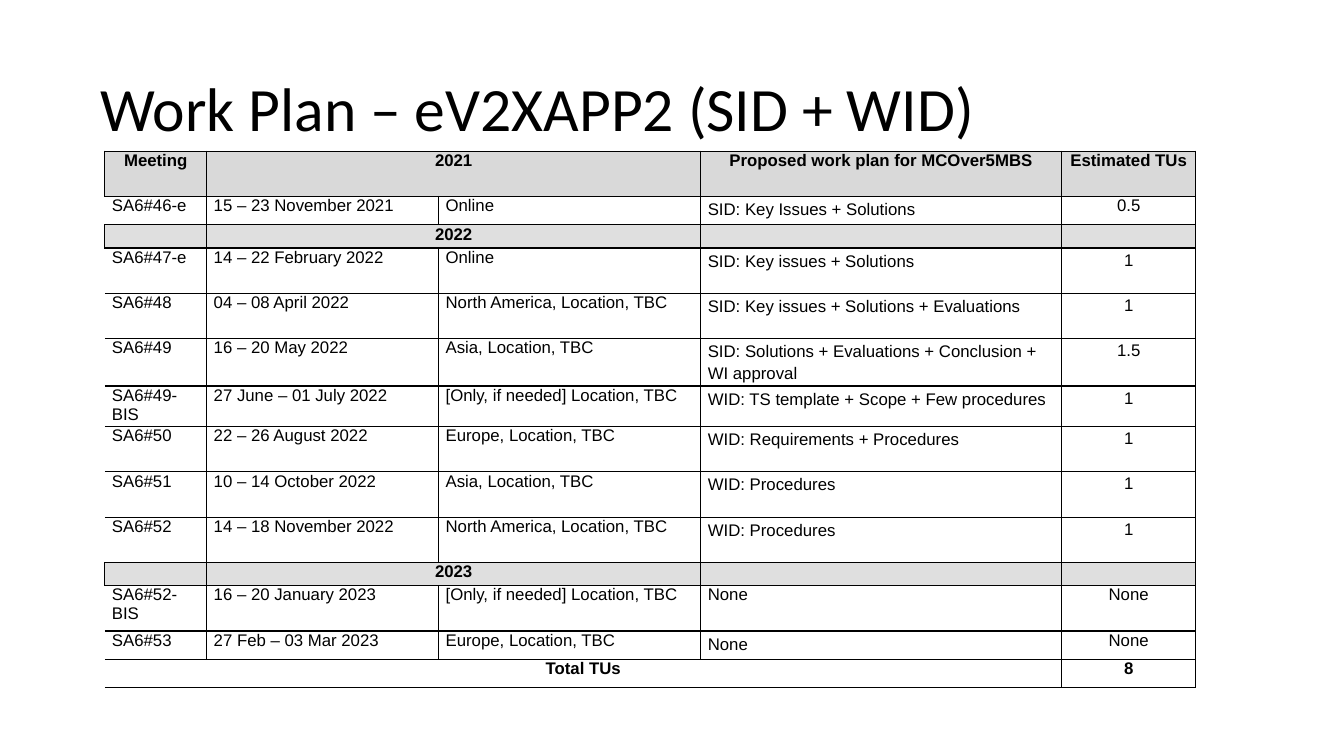
from lxml import etree
from pptx import Presentation
from pptx.dml.color import RGBColor
from pptx.enum.text import MSO_ANCHOR, PP_ALIGN
from pptx.oxml.ns import qn
from pptx.util import Inches, Pt

BLACK, WHITE, HEADER_GREY, YEAR_GREY = "000000", "FFFFFF", "D9D9D9", "DFDFDF"

COL_WIDTHS = [1.01, 2.3, 2.6, 3.58, 1.33]
TALL, SHORT, YEAR = 0.45, 0.28, 0.23
ROWS = [
    (TALL, ["Meeting", "2021", "", "Proposed work plan for MCOver5MBS", "Estimated TUs"]),
    (SHORT, ["SA6#46-e", "15 – 23 November 2021", "Online", "SID: Key Issues + Solutions", "0.5"]),
    (YEAR, ["", "2022", "", "", ""]),
    (TALL, ["SA6#47-e", "14 – 22 February 2022", "Online", "SID: Key issues + Solutions", "1"]),
    (TALL, ["SA6#48", "04 – 08 April 2022", "North America, Location, TBC",
            "SID: Key issues + Solutions + Evaluations", "1"]),
    (0.44, ["SA6#49", "16 – 20 May 2022", "Asia, Location, TBC",
            "SID: Solutions + Evaluations + Conclusion + WI approval", "1.5"]),
    (0.38, ["SA6#49-BIS", "27 June – 01 July 2022", "[Only, if needed] Location, TBC",
            "WID: TS template + Scope + Few procedures", "1"]),
    (TALL, ["SA6#50", "22 – 26 August 2022", "Europe, Location, TBC",
            "WID: Requirements + Procedures", "1"]),
    (TALL, ["SA6#51", "10 – 14 October 2022", "Asia, Location, TBC", "WID: Procedures", "1"]),
    (TALL, ["SA6#52", "14 – 18 November 2022", "North America, Location, TBC", "WID: Procedures", "1"]),
    (YEAR, ["", "2023", "", "", ""]),
    (TALL, ["SA6#52-BIS", "16 – 20 January 2023", "[Only, if needed] Location, TBC", "None", "None"]),
    (SHORT, ["SA6#53", "27 Feb – 03 Mar 2023", "Europe, Location, TBC", "None", "None"]),
    (SHORT, ["Total TUs", "", "", "", "8"]),
]
TOTAL_ROW = len(ROWS) - 1
YEAR_ROWS = [i for i, (height, _) in enumerate(ROWS) if height == YEAR]
PLAN_COL, TU_COL = 3, 4


def style_run(r, size, font, bold=False):
    r.font.size, r.font.name, r.font.bold = Pt(size), font, bold
    r.font.color.rgb = RGBColor.from_string(BLACK)


def set_borders(cell, sides, width=1):
    """Draw the named sides (L, R, T, B) in black and leave the others open."""
    tcPr = cell._tc.get_or_add_tcPr()
    for i, side in enumerate("LRTB"):
        ln = etree.Element(qn(f"a:ln{side}"), w=str(Pt(width)))
        if side in sides:
            fill = etree.SubElement(ln, qn("a:solidFill"))
            etree.SubElement(fill, qn("a:srgbClr"), val=BLACK)
        else:
            etree.SubElement(ln, qn("a:noFill"))
        tcPr.insert(i, ln)


prs = Presentation()
prs.slide_width, prs.slide_height = Inches(13.33), Inches(7.5)
s = prs.slides.add_slide(prs.slide_layouts[6])

title = s.shapes.add_textbox(Inches(0.9), Inches(0.38), Inches(11.5), Inches(1.45))
tf = title.text_frame
tf.word_wrap = True
tf.vertical_anchor = MSO_ANCHOR.MIDDLE
p = tf.paragraphs[0]
p.line_spacing = 0.9
r = p.add_run()
r.text = "Work Plan – eV2XAPP2 (SID + WID)"
style_run(r, 44, "Calibri")

table = s.shapes.add_table(
    len(ROWS), len(COL_WIDTHS), Inches(1.04), Inches(1.5),
    Inches(sum(COL_WIDTHS)), Inches(sum(height for height, _ in ROWS))).table
table.first_row = table.horz_banding = False
for col, width in zip(table.columns, COL_WIDTHS):
    col.width = Inches(width)
for i in [0, *YEAR_ROWS]:
    table.cell(i, 1).merge(table.cell(i, 2))
table.cell(TOTAL_ROW, 0).merge(table.cell(TOTAL_ROW, PLAN_COL))

for i, (height, texts) in enumerate(ROWS):
    table.rows[i].height = Inches(height)
    shaded = i == 0 or i in YEAR_ROWS
    bold = shaded or i == TOTAL_ROW
    for j, text in enumerate(texts):
        cell = table.cell(i, j)
        # The planned meetings from 2022 on, before the 2023 heading
        planned = YEAR_ROWS[0] < i < YEAR_ROWS[1]
        loose = (j == PLAN_COL and not bold and i != YEAR_ROWS[1] + 1) or (j == TU_COL and planned and not bold)
        cell.margin_left = cell.margin_right = Inches(0.07)
        cell.margin_bottom = 0
        cell.margin_top = Inches(0.01 if loose and j == PLAN_COL else 0)
        cell.fill.solid()
        cell.fill.fore_color.rgb = RGBColor.from_string(
            HEADER_GREY if i == 0 else YEAR_GREY if shaded else WHITE)
        if cell.is_spanned:
            set_borders(cell, "TB")
        else:
            set_borders(cell, "LRTB" if shaded or j else "RTB")

        p = cell.text_frame.paragraphs[0]
        p.alignment = PP_ALIGN.CENTER if bold or j == TU_COL else PP_ALIGN.LEFT
        if text:
            p.space_before = p.space_after = Pt(1)
            p.line_spacing = 1.15 if loose else 1.0
            r = p.add_run()
            r.text = text
            style_run(r, 12, "Arial", bold)
        else:
            etree.SubElement(p._p, qn("a:endParaRPr"), sz="1200")

prs.save("out.pptx")
